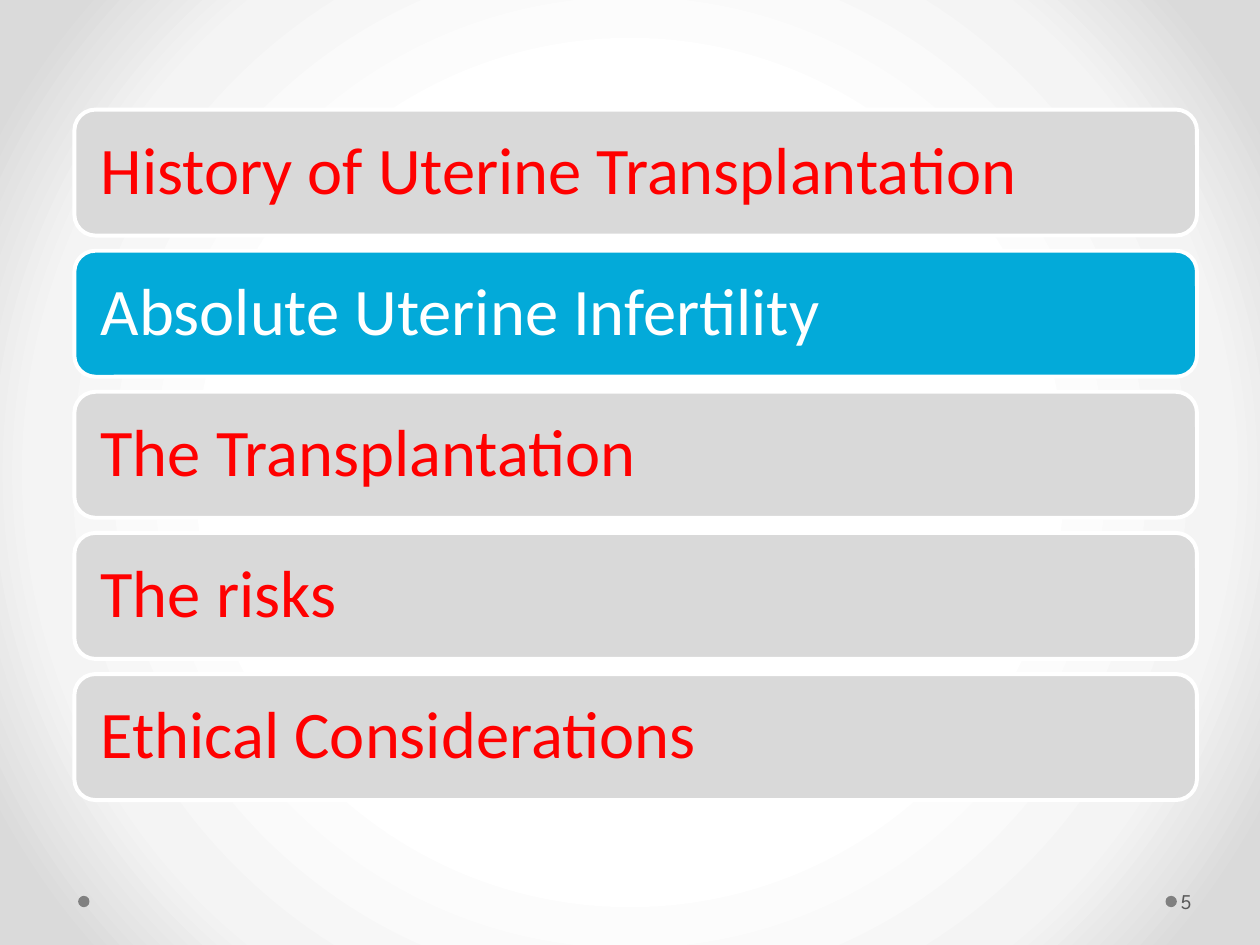
import lxml.etree
import pptx
import pptx.dml.color
import pptx.enum.shapes
import pptx.enum.text
import pptx.oxml
import pptx.oxml.ns
import pptx.util

RGB = pptx.dml.color.RGBColor
RED = RGB(0xFF, 0x00, 0x00)
WHITE = RGB(0xFF, 0xFF, 0xFF)
BLUE = RGB(0x03, 0xAA, 0xD9)
PALE = RGB(0xD9, 0xD9, 0xD9)
GREY = RGB(0x80, 0x80, 0x80)
DARK = RGB(0x59, 0x59, 0x59)
STOPS = [(50, WHITE), (76, RGB(0xF4, 0xF4, 0xF4)), (92, RGB(0xDA, 0xDA, 0xDA))]
TOPICS = [
    "History of Uterine Transplantation",
    "Absolute Uterine Infertility",
    "The Transplantation",
    "The risks",
    "Ethical Considerations",
]
ACTIVE = 1
LEFT, TOP, WIDTH, HEIGHT, PITCH = 0.59, 0.87, 8.91, 1, 1.12

inch = pptx.util.Inches
kind = pptx.enum.shapes.MSO_SHAPE
deck = pptx.Presentation()
deck.slide_width, deck.slide_height = inch(10), inch(7.5)
slide = deck.slides.add_slide(deck.slide_layouts[6])


def put_shape(form, left, top, width, height, fill):
    shape = slide.shapes.add_shape(form, inch(left), inch(top), inch(width), inch(height))
    shape.shadow.inherit = False
    shape.fill.solid()
    shape.fill.fore_color.rgb = fill
    shape.line.fill.background()
    return shape


def put_text(shape, text, font, size, color, left, right):
    frame = shape.text_frame
    frame.word_wrap = True
    frame.vertical_anchor = pptx.enum.text.MSO_ANCHOR.MIDDLE
    frame.margin_left, frame.margin_right = inch(left), inch(right)
    para = frame.paragraphs[0]
    para.alignment = pptx.enum.text.PP_ALIGN.LEFT
    run = para.add_run()
    run.text = text
    run.font.name = font
    run.font.size = pptx.util.Pt(size)
    run.font.color.rgb = color
    return para


slide.background.fill.gradient()
grad = next(slide.background._cSld.iter(pptx.oxml.ns.qn("a:gradFill")))
marks = "".join(
    f'<a:gs pos="{share * 1000}"><a:srgbClr val="{color}"/></a:gs>' for share, color in STOPS
)
glow = pptx.oxml.parse_xml(
    f'<a:gradFill {pptx.oxml.ns.nsdecls("a")} rotWithShape="1"><a:gsLst>{marks}</a:gsLst>'
    '<a:path path="circle"><a:fillToRect l="50000" t="50000" r="50000" b="50000"/></a:path>'
    "</a:gradFill>"
)
grad.getparent().replace(grad, glow)

for left in (9.25, 0.62):
    put_shape(kind.OVAL, left, 7.11, 0.09, 0.09, GREY)

page = slide.shapes.add_textbox(inch(9.34), inch(6.95), inch(0.61), inch(0.4))
put_text(page, "5", "League Spartan", 12, DARK, 0.03, 0.05)

for row, topic in enumerate(TOPICS):
    fill, color = (BLUE, WHITE) if row == ACTIVE else (PALE, RED)
    bar = put_shape(kind.ROUNDED_RECTANGLE, LEFT, TOP + row * PITCH, WIDTH, HEIGHT, fill)
    bar.line.color.rgb = WHITE
    bar.line.width = pptx.util.Pt(2.25)
    para = put_text(bar, topic, "Calibri", 38, color, 0.16, 0.16)
    para.line_spacing = 0.9

deck.save("out.pptx")
